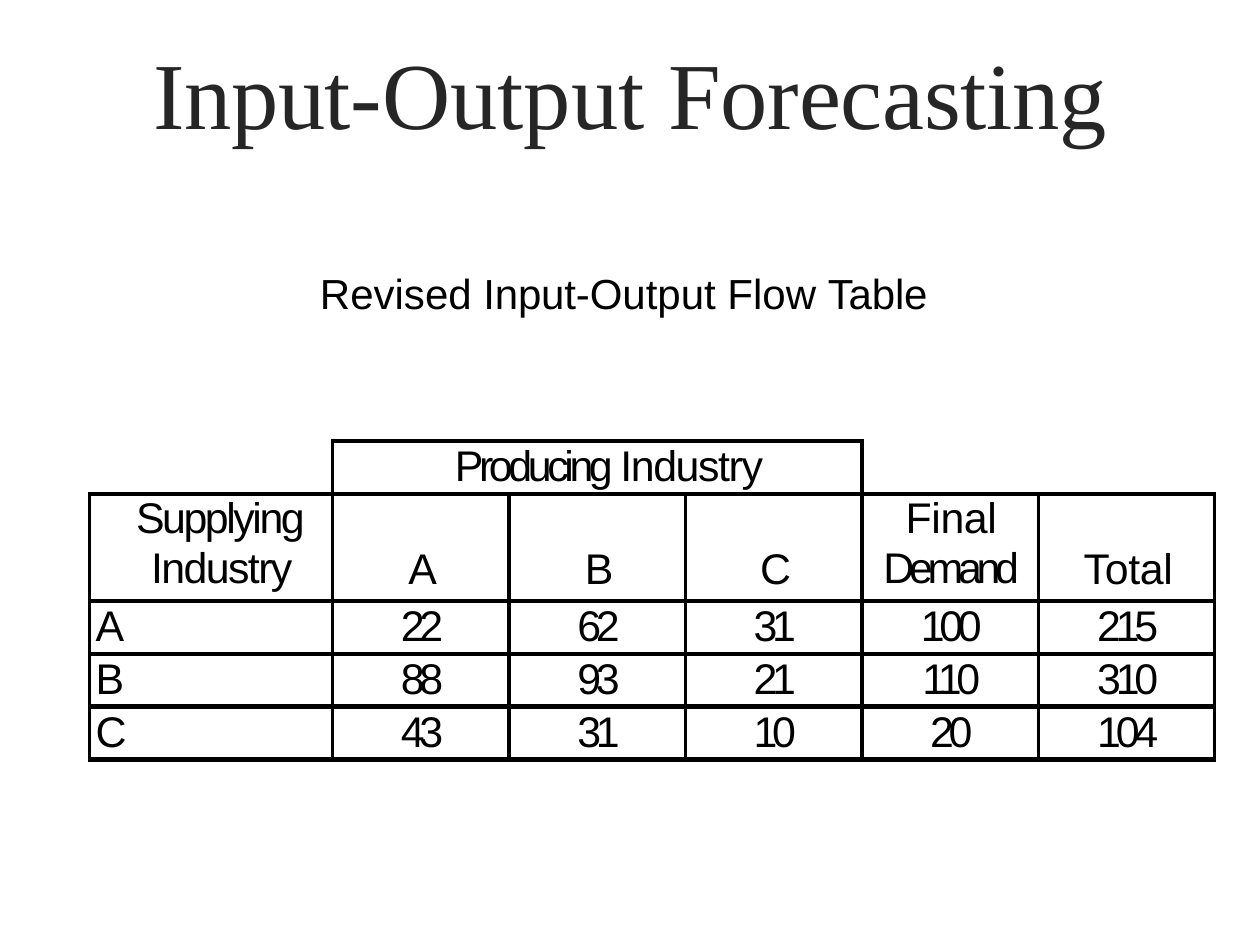
from lxml import etree
from pptx import Presentation
from pptx import util as u
from pptx.dml.color import RGBColor
from pptx.enum import text
from pptx.oxml.ns import qn

BLACK = "000000"
LEFT, CENTER = text.PP_ALIGN.LEFT, text.PP_ALIGN.CENTER
CELL_SIZE = 24.5
SYMBOL_SPACING = {"A": -3.6, "B": -3.6, "C": -3.9}
FLOWS = {
    "A": (22, 62, 31, 100, 215),
    "B": (88, 93, 21, 110, 310),
    "C": (43, 31, 10, 20, 104),
}


def color(hex_code):
    """Turn a hex string into a colour."""
    return RGBColor.from_string(hex_code)


def write_line(paragraph, pieces, size, font="Arial", ink=BLACK, align=LEFT,
               indent=0.0, line=None):
    """Write (wording, letter spacing) pieces into one paragraph."""
    paragraph.alignment = align
    paragraph._p.get_or_add_pPr().set("marL", str(u.Inches(indent)))
    if line:
        paragraph.line_spacing = u.Pt(line)
    for wording, spacing in pieces:
        run = paragraph.add_run()
        run.text = wording
        run.font.size = u.Pt(size)
        run.font.name = font
        run.font.color.rgb = color(ink)
        run._r.get_or_add_rPr().set("spc", str(round(spacing * 100)))


def add_heading(slide, box, pieces, size, anchor=text.MSO_ANCHOR.TOP, **style):
    """Place a one-line heading in the box."""
    frame = slide.shapes.add_textbox(*map(u.Inches, box)).text_frame
    frame.word_wrap = True
    frame.vertical_anchor = anchor
    frame.margin_left = frame.margin_right = frame.margin_bottom = 0
    frame.margin_top = u.Inches(0.01)
    write_line(frame.paragraphs[0], pieces, size, indent=0.01, **style)


def draw_borders(cell, widths):
    """Draw the cell's sides with the given widths, leaving out the others."""
    properties = cell._tc.get_or_add_tcPr()
    for place, side in enumerate("LRTB"):
        width = widths.get(side)
        line = etree.Element(qn(f"a:ln{side}"))
        if width:
            line.set("w", str(u.Pt(width)))
            fill = etree.SubElement(line, qn("a:solidFill"))
            etree.SubElement(fill, qn("a:srgbClr")).set("val", BLACK)
        else:
            etree.SubElement(line, qn("a:noFill"))
        properties.insert(place, line)


def border_widths(row, column):
    """Give the side widths of a cell by its place in the grid."""
    if row == 0 and column == 0:
        return {"R": 2.25, "B": 3}
    if row == 0 and column > 3:
        return {"L": 2.25, "B": 3} if column == 4 else {"B": 3}
    return {"L": 2.25, "R": 1.5 if column == 5 else 2.25, "T": 3, "B": 3}


def fill_cell(cell, lines, top=0.0, **style):
    """Write lines of (pieces, indent) into a cell."""
    cell.margin_top = u.Inches(top)
    frame = cell.text_frame
    for number, (pieces, indent) in enumerate(lines):
        paragraph = frame.add_paragraph() if number else frame.paragraphs[0]
        write_line(paragraph, pieces, CELL_SIZE, indent=indent, **style)
        if number:
            paragraph.space_before = u.Pt(1.2)
            paragraph.line_spacing = None


def add_flow_table(slide, box):
    """Place the input-output flow table in the box."""
    table = slide.shapes.add_table(5, 6, *map(u.Inches, box)).table
    table.first_row = table.horz_banding = False
    for number, column in enumerate(table.columns):
        column.width = u.Inches(1.4 if number else 1.93)
    for number, row in enumerate(table.rows):
        row.height = u.Inches(0.85 if number == 1 else 0.42)
        for place, cell in enumerate(row.cells):
            cell.margin_left = cell.margin_right = 0
            cell.margin_top = cell.margin_bottom = 0
            cell.fill.background()
            draw_borders(cell, border_widths(number, place))
    table.cell(0, 1).merge(table.cell(0, 3))
    table.cell(0, 4).merge(table.cell(0, 5))

    fill_cell(table.cell(0, 1),
              [([("Producing ", -2.5), ("Industry", -0.8)], 0.97)], line=28.4)
    fill_cell(table.cell(1, 0),
              [([("Supplying", -1.4)], 0.37), ([("Industry", -0.9)], 0.49)],
              line=27.8)
    fill_cell(table.cell(1, 4),
              [([("Final", -0.2)], 0.02), ([("Demand", -3)], 0.02)],
              align=CENTER, line=27.8)
    for column, label in {1: "A", 2: "B", 3: "C", 5: "Total"}.items():
        spacing = SYMBOL_SPACING.get(label, -0.2)
        fill_cell(table.cell(1, column), [([(label, spacing)], 0.03)],
                  top=0.41, align=CENTER)

    for row, (industry, amounts) in enumerate(FLOWS.items(), start=2):
        fill_cell(table.cell(row, 0),
                  [([(industry, SYMBOL_SPACING[industry])], 0.05)], line=28.4)
        for column, amount in enumerate(amounts, start=1):
            fill_cell(table.cell(row, column), [([(str(amount), -3)], 0.02)],
                      align=CENTER, line=28.4)


def main():
    """Build the slide and save it."""
    deck = Presentation()
    deck.slide_width, deck.slide_height = u.Inches(10), u.Inches(7.5)
    slide = deck.slides.add_slide(deck.slide_layouts[6])
    add_heading(slide, (1.06, 0.26, 7.88, 0.93),
                [("Input-", -0.3), ("Output ", 0), ("Forecasting", -0.1)], 54,
                anchor=text.MSO_ANCHOR.MIDDLE, font="Times New Roman",
                ink="262626", align=CENTER)
    add_heading(slide, (2.53, 2.11, 4.86, 0.43),
                [("Revised ", 0), ("Input-", -0.1), ("Output Flow ", 0),
                 ("Table", -0.1)], 24)
    add_flow_table(slide, (0.71, 3.5, 8.93, 2.55))
    deck.save("out.pptx")


if __name__ == "__main__":
    main()
